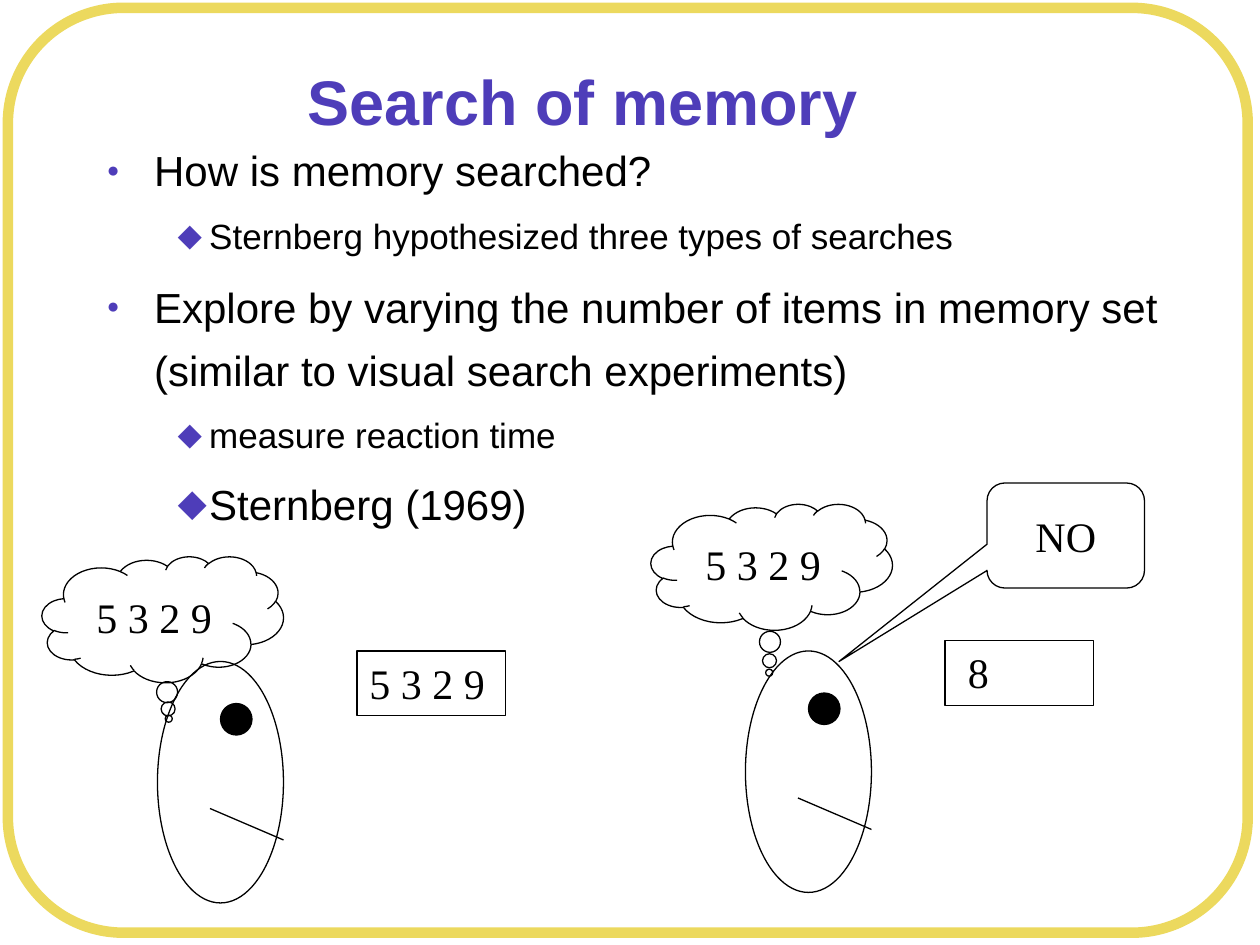
from lxml import etree
from pptx import Presentation
from pptx.dml.color import RGBColor
from pptx.enum.shapes import MSO_CONNECTOR as Conn, MSO_SHAPE as Kind
from pptx.enum.text import MSO_ANCHOR as Anchor, PP_ALIGN as Align
from pptx.oxml.ns import qn
from pptx.util import Pt

BLACK = RGBColor(0x00, 0x00, 0x00)
GOLD = RGBColor(0xEC, 0xD9, 0x5E)
VIOLET = RGBColor(0x4E, 0x3D, 0xB9)

# Indent, line spacing, bullet sign and bullet size for each list level
LEVELS = [
    dict(left=27, hang=27, gap=1.25, sign="●", size=50),
    dict(left=58.5, hang=18, gap=1.2, sign="⬥", size=100),
]
POINTS = [
    (0, 24, "How is memory searched?"),
    (1, 20, "Sternberg hypothesized three types of searches"),
    (0, 24, "Explore by varying the number of items in memory set "
            "(similar to visual search experiments)"),
    (1, 20, "measure reaction time"),
    (1, 24, "Sternberg (1969)"),
]
# Head corner, cloud corner, cloud tail and card text for each person
PEOPLE = [
    ((90, 378), (24, 318), (0.025, 0.788), "5 3 2 9"),
    ((426, 372), (372, 288), (-0.01, 0.839), " 8"),
]


def assign(item, values):
    for name, value in values.items():
        setattr(item, name, value)


def add(parent, tag, **attrs):
    return etree.SubElement(parent, qn(tag), attrs)


class Sketch:
    """Draws on one slide in a fixed style; lengths are in points."""

    head = dict(name="Arial", size=Pt(36), bold=True)
    note = dict(name="Times New Roman", size=Pt(24))

    def __init__(self, slide):
        self.slide = slide

    def shape(self, kind, box, fill=None, line=BLACK, width=0.75, adj=(), into=None):
        shapes = (into or self.slide).shapes
        item = shapes.add_shape(kind, *map(Pt, box))
        item.shadow.inherit = False
        if fill is None:
            item.fill.background()
        else:
            item.fill.solid()
            item.fill.fore_color.rgb = fill
        item.line.color.rgb = line
        item.line.width = Pt(width)
        for i, value in enumerate(adj):
            item.adjustments[i] = value
        return item

    def line(self, start, end, into):
        item = into.shapes.add_connector(Conn.STRAIGHT, *map(Pt, start + end))
        item.line.color.rgb = BLACK
        item.line.width = Pt(0.75)
        add(item._element.spPr, "a:effectLst")

    def label(self, item, text, font, color=BLACK, align=Align.CENTER,
              anchor=Anchor.MIDDLE, wrap=False):
        assign(item.text_frame, dict(word_wrap=wrap, vertical_anchor=anchor))
        para = item.text_frame.paragraphs[0]
        para.alignment = align
        run = para.add_run()
        run.text = text
        assign(run.font, font)
        run.font.color.rgb = color

    def title(self, text, box):
        item = self.slide.shapes.add_textbox(*map(Pt, box))
        self.label(item, text, self.head, VIOLET, wrap=True)
        item.text_frame.paragraphs[0].line_spacing = 0.9

    def bullets(self, points, box):
        frame = self.slide.shapes.add_textbox(*map(Pt, box)).text_frame
        frame.word_wrap = True
        for i, (level, size, text) in enumerate(points):
            para = frame.add_paragraph() if i else frame.paragraphs[0]
            para.level = level
            run = para.add_run()
            run.text = text
            assign(run.font, dict(name="Arial", size=Pt(size)))
            run.font.color.rgb = BLACK
            self.mark(para, **LEVELS[level])

    def mark(self, para, left, hang, gap, sign, size):
        """Gives a paragraph its spacing, hanging indent and bullet."""
        para.line_spacing = gap
        props = para._p.get_or_add_pPr()
        props.set("marL", str(Pt(left)))
        props.set("indent", str(-Pt(hang)))
        add(add(props, "a:spcBef"), "a:spcPct", val="30000")
        add(add(props, "a:buClr"), "a:srgbClr", val=str(VIOLET))
        add(props, "a:buSzPct", val=str(size * 1000))
        add(props, "a:buFont", typeface="Arial")
        add(props, "a:buChar", char=sign)

    def face(self, x, y):
        group = self.slide.shapes.add_group_shape()
        self.shape(Kind.OVAL, (x, y, 72, 138), into=group)
        self.shape(Kind.OVAL, (x + 36, y + 24, 18, 18), fill=BLACK, into=group)
        self.line((x + 30, y + 84), (x + 72, y + 102), group)

    def card(self, text, x, y):
        item = self.shape(Kind.RECTANGLE, (x, y, 85, 37))
        self.label(item, text, self.note, align=Align.LEFT,
                   anchor=Anchor.TOP, wrap=True)

    def bubble(self, kind, text, box, adj):
        self.label(self.shape(kind, box, adj=adj), text, self.note)


def main():
    deck = Presentation()
    assign(deck, dict(slide_width=Pt(720), slide_height=Pt(540)))
    sketch = Sketch(deck.slides.add_slide(deck.slide_layouts[6]))

    sketch.shape(Kind.ROUNDED_RECTANGLE, (4.5, 4.5, 708.5, 528.5),
                 line=GOLD, width=6, adj=(0.125,))
    sketch.title("Search of memory", (66, 30, 534, 60))
    sketch.bullets(POINTS, (54, 72, 618, 145.5))

    for (x, y), cloud, tail, text in PEOPLE:
        sketch.face(x, y)
        sketch.card(text, x + 114, y - 6)
        sketch.bubble(Kind.CLOUD_CALLOUT, "5 3 2 9", (*cloud, 138, 72), tail)
    sketch.bubble(Kind.ROUNDED_RECTANGULAR_CALLOUT, "NO",
                  (564, 276, 90, 60), (-1.44, 1.2, 0.17))

    deck.save("out.pptx")


if __name__ == "__main__":
    main()
